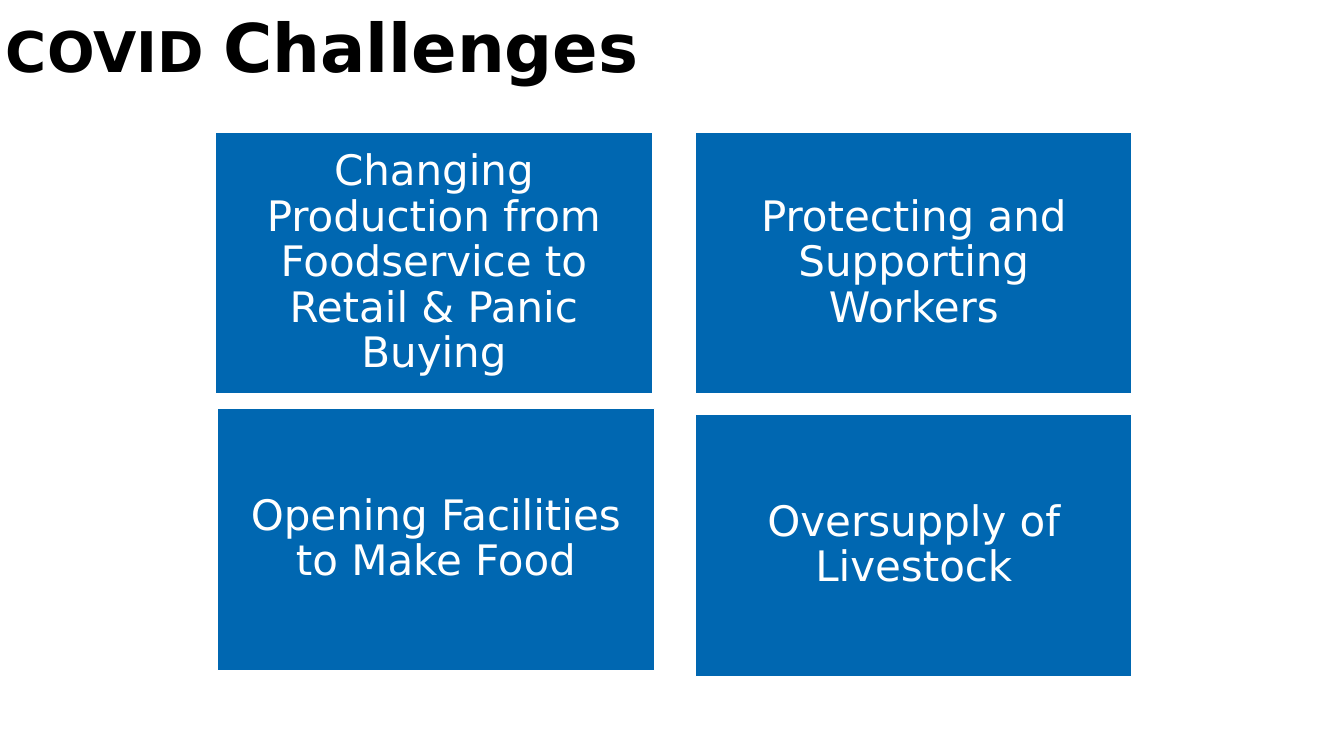
"""Build the COVID Challenges slide."""
from dataclasses import dataclass

from pptx import Presentation
from pptx import util as u
from pptx.dml.color import RGBColor
from pptx.enum import shapes, text

BLACK = RGBColor(0x00, 0x00, 0x00)
WHITE = RGBColor(0xFF, 0xFF, 0xFF)
BLUE = RGBColor(0x00, 0x67, 0xB1)
FACE = "DejaVu Sans"
WIDTH, HEIGHT = u.Inches(4.33), u.Inches(2.6)
PAD = u.Inches(0.12)


@dataclass(frozen=True)
class Card:
    """A challenge and the corner of its box in inches."""
    label: str
    left: float
    top: float


CARDS = [
    Card("Changing Production from Foodservice to Retail & Panic Buying", 2.14, 1.31),
    Card("Protecting and Supporting Workers", 6.9, 1.31),
    Card("Opening Facilities to Make Food", 2.16, 4.05),
    Card("Oversupply of Livestock", 6.9, 4.11),
]


def apply(item: object, style: dict) -> None:
    """Set every attribute in the style."""
    for name, value in style.items():
        setattr(item, name, value)


def add_run(para, label: str, size: int, color: RGBColor, bold: bool) -> None:
    """Add a styled run to a paragraph."""
    run = para.add_run()
    run.text = label
    apply(run.font, {"name": FACE, "size": u.Pt(size), "bold": bold})
    run.font.color.rgb = color


def add_title(slide) -> None:
    """Draw the two-size heading."""
    box = slide.shapes.add_textbox(
        u.Inches(0), u.Inches(0.06), u.Inches(12), u.Inches(1.25))
    apply(box.text_frame, {
        "word_wrap": True,
        "vertical_anchor": text.MSO_ANCHOR.TOP,
        "margin_left": u.Inches(0.06),
        "margin_top": u.Inches(0.08),
    })
    para = box.text_frame.paragraphs[0]
    para.line_spacing = 0.9
    for label, size in (("COVID ", 40), ("Challenges", 48)):
        add_run(para, label, size, BLACK, True)


def add_card(slide, card: Card) -> None:
    """Draw one blue box with its label."""
    box = slide.shapes.add_shape(
        shapes.MSO_SHAPE.RECTANGLE,
        u.Inches(card.left), u.Inches(card.top), WIDTH, HEIGHT)
    box.shadow.inherit = False
    box.fill.solid()
    box.fill.fore_color.rgb = BLUE
    box.line.color.rgb = WHITE
    box.line.width = u.Pt(1)
    apply(box.text_frame, {
        "word_wrap": True,
        "vertical_anchor": text.MSO_ANCHOR.MIDDLE,
        "margin_left": PAD,
        "margin_right": PAD,
        "margin_top": PAD,
        "margin_bottom": PAD,
    })
    para = box.text_frame.paragraphs[0]
    apply(para, {"alignment": text.PP_ALIGN.CENTER, "line_spacing": 0.9})
    add_run(para, card.label, 30, WHITE, False)


def main() -> None:
    """Build and save the deck."""
    deck = Presentation()
    apply(deck, {"slide_width": u.Inches(13.33), "slide_height": u.Inches(7.5)})
    slide = deck.slides.add_slide(deck.slide_layouts[6])
    add_title(slide)
    for card in CARDS:
        add_card(slide, card)
    deck.save("out.pptx")


if __name__ == "__main__":
    main()
